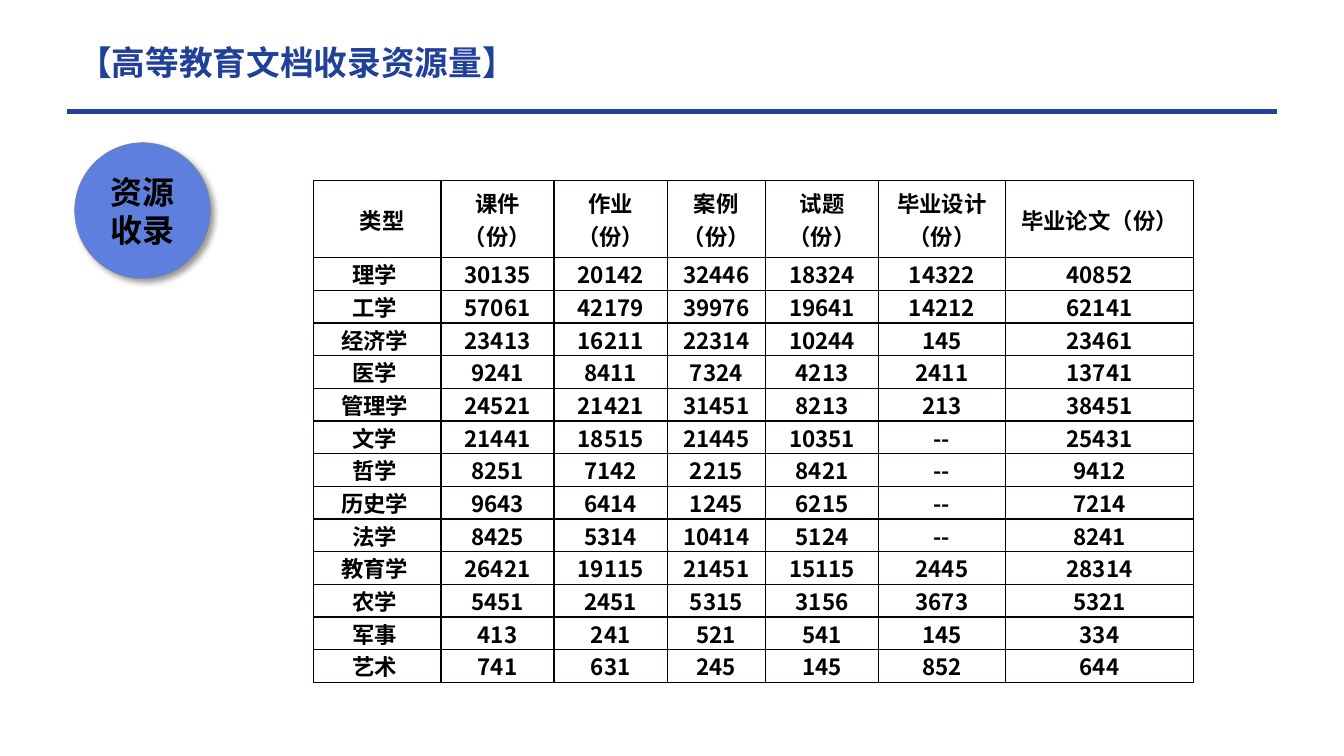
"""Build the slide on the volume of higher-education documents collected."""
from lxml import etree
from pptx import Presentation
from pptx.dml.color import RGBColor
from pptx.enum import shapes, text
from pptx.oxml import ns, parse_xml
from pptx.util import Cm, Pt

TITLE = "【高等教育文档收录资源量】"
BADGE = ["资源", "收录"]
HEADER = ["类型", "课件（份）", "作业（份）", "案例（份）", "试题（份）", "毕业设计（份）", "毕业论文（份）"]
ROWS = [
    ("理学", 30135, 20142, 32446, 18324, 14322, 40852),
    ("工学", 57061, 42179, 39976, 19641, 14212, 62141),
    ("经济学", 23413, 16211, 22314, 10244, 145, 23461),
    ("医学", 9241, 8411, 7324, 4213, 2411, 13741),
    ("管理学", 24521, 21421, 31451, 8213, 213, 38451),
    ("文学", 21441, 18515, 21445, 10351, "--", 25431),
    ("哲学", 8251, 7142, 2215, 8421, "--", 9412),
    ("历史学", 9643, 6414, 1245, 6215, "--", 7214),
    ("法学", 8425, 5314, 10414, 5124, "--", 8241),
    ("教育学", 26421, 19115, 21451, 15115, 2445, 28314),
    ("农学", 5451, 2451, 5315, 3156, 3673, 5321),
    ("军事", 413, 241, 521, 541, 145, 334),
    ("艺术", 741, 631, 245, 145, 852, 644),
]
COL_WIDTHS = [2.81, 2.5, 2.5, 2.17, 2.5, 2.8, 4.16]
HEADER_HEIGHT, ROW_HEIGHT = 1.7, 0.69
CELL_MARGIN, HEADER_SHIFT, LABEL_SHIFT = 0.18, 0.22, 0.11

NAVY = RGBColor(0x20, 0x40, 0x9A)
BLUE = RGBColor(0x5E, 0x7F, 0xDE)
GRAY = RGBColor(0x80, 0x80, 0x80)
BLACK = RGBColor(0, 0, 0)
BORDER = RGBColor(0x08, 0, 0)
CJK, LATIN = "Noto Sans CJK SC", "Roboto"


def style(p, size, color, name, align):
    """Set the alignment and the bold font of a paragraph."""
    p.alignment = align
    p.font.size, p.font.bold, p.font.name = Pt(size), True, name
    p.font.color.rgb = color
    etree.SubElement(p._p.pPr.defRPr, ns.qn("a:ea"), typeface=name)


def set_borders(cell):
    """Draw a thin line on the four sides of a cell."""
    tcPr = cell._tc.get_or_add_tcPr()
    for i, side in enumerate(("lnL", "lnR", "lnT", "lnB")):
        tcPr.insert(i, parse_xml(
            f'<a:{side} {ns.nsdecls("a")} w="{Pt(1)}"><a:solidFill>'
            f'<a:srgbClr val="{BORDER}"/></a:solidFill></a:{side}>'))


def add_title(s):
    """Place the title and the rule below it."""
    title = s.shapes.title
    title.left, title.top, title.width, title.height = Cm(1.47), Cm(0.66), Cm(26.75), Cm(1.42)
    tf = title.text_frame
    tf.text = TITLE
    tf.auto_size = text.MSO_AUTO_SIZE.NONE
    tf.vertical_anchor = text.MSO_ANCHOR.MIDDLE
    style(tf.paragraphs[0], 21.1, NAVY, CJK, text.PP_ALIGN.LEFT)
    rule = s.shapes.add_connector(shapes.MSO_CONNECTOR.STRAIGHT, Cm(1.47), Cm(2.46), Cm(28.22), Cm(2.46))
    rule.line.color.rgb, rule.line.width = NAVY, Pt(3)
    etree.SubElement(rule._element.spPr, ns.qn("a:effectLst"))


def add_badge(s):
    """Place the round label with its soft shadow."""
    sp = s.shapes.add_shape(shapes.MSO_SHAPE.OVAL, Cm(1.65), Cm(3.15), Cm(3), Cm(3))
    sp.fill.solid()
    sp.fill.fore_color.rgb = BLUE
    sp.line.color.rgb, sp.line.width = GRAY, Pt(0.25)
    sp._element.spPr.append(parse_xml(
        f'<a:effectLst {ns.nsdecls("a")}><a:outerShdw blurRad="{Pt(4)}" dist="{Pt(3)}" '
        f'dir="{45 * 60000}" algn="tl" rotWithShape="0"><a:srgbClr val="{BLACK}">'
        '<a:alpha val="40000"/></a:srgbClr></a:outerShdw></a:effectLst>'))
    tf = sp.text_frame
    tf.text = "\n".join(BADGE)
    tf.vertical_anchor = text.MSO_ANCHOR.MIDDLE
    for p in tf.paragraphs:
        style(p, 20, BLACK, LATIN, text.PP_ALIGN.CENTER)


def add_resources(s):
    """Place the table of resources by subject and type."""
    data = [HEADER, *ROWS]
    heights = [HEADER_HEIGHT] + [ROW_HEIGHT] * len(ROWS)
    table = s.shapes.add_table(len(data), len(HEADER), Cm(6.93), Cm(3.99),
                               Cm(sum(COL_WIDTHS)), Cm(sum(heights))).table
    table.first_row = table.horz_banding = False
    for col, width in zip(table.columns, COL_WIDTHS):
        col.width = Cm(width)
    for row, height, values in zip(table.rows, heights, data):
        row.height = Cm(height)
        for cell, value in zip(row.cells, values):
            cell.text = str(value)
            cell.fill.background()
            cell.vertical_anchor = text.MSO_ANCHOR.MIDDLE
            cell.margin_left = cell.margin_right = Cm(CELL_MARGIN)
            cell.margin_top = cell.margin_bottom = 0
            style(cell.text_frame.paragraphs[0], 14, BLACK, CJK, text.PP_ALIGN.CENTER)
            set_borders(cell)
    for i in range(len(data)):
        label = table.cell(i, 0)
        if i:
            label.margin_right = Cm(CELL_MARGIN + LABEL_SHIFT)
        else:
            label.margin_left = Cm(CELL_MARGIN + HEADER_SHIFT)


def main():
    """Create and save the presentation."""
    prs = Presentation()
    prs.slide_width, prs.slide_height = Cm(29.69), Cm(16.69)
    s = prs.slides.add_slide(prs.slide_layouts[5])
    add_title(s)
    add_badge(s)
    add_resources(s)
    prs.save("out.pptx")


if __name__ == "__main__":
    main()
